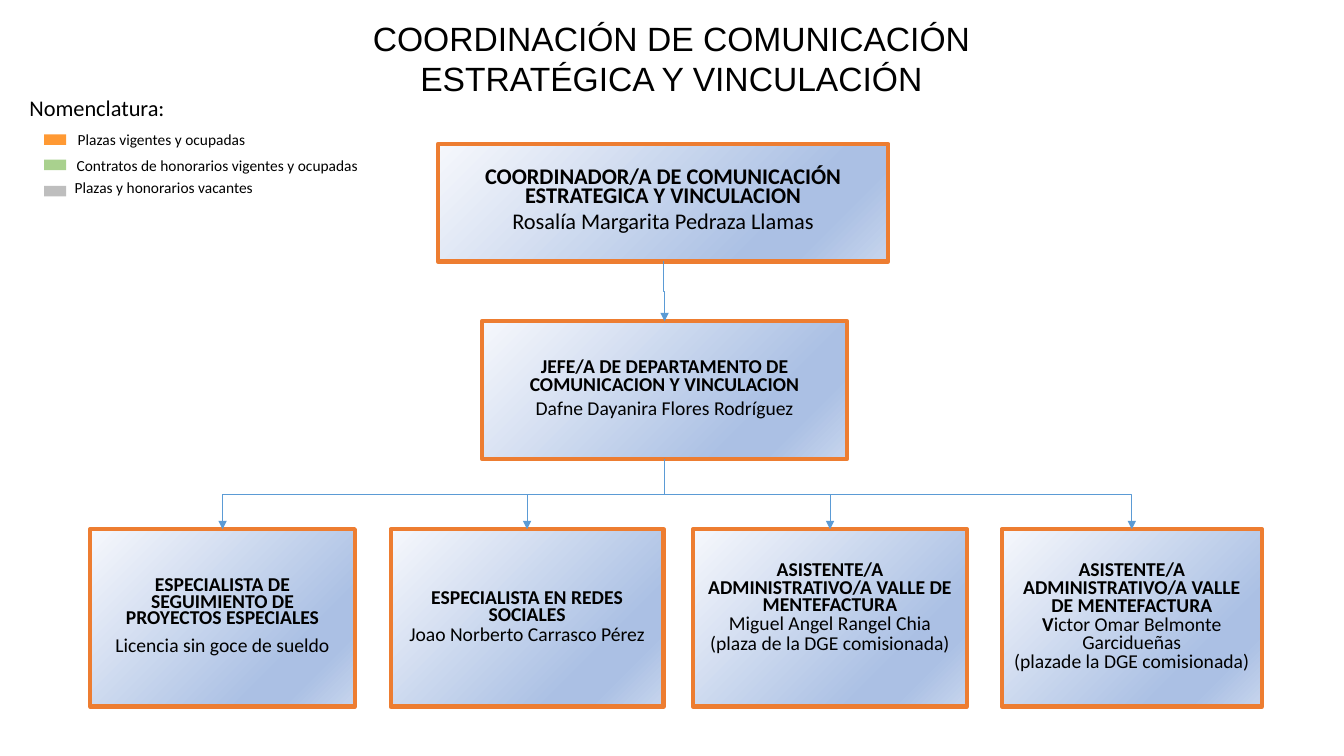
from lxml import etree
from pptx import Presentation
from pptx.dml.color import RGBColor
from pptx.enum.shapes import MSO_CONNECTOR, MSO_SHAPE
from pptx.enum.text import MSO_ANCHOR, MSO_AUTO_SIZE, PP_ALIGN
from pptx.oxml.ns import qn
from pptx.util import Pt

RECT = MSO_SHAPE.RECTANGLE
ELBOW = MSO_CONNECTOR.ELBOW
MIDDLE = MSO_ANCHOR.MIDDLE
CENTER, LEFT = PP_ALIGN.CENTER, PP_ALIGN.LEFT
NO_FIT = MSO_AUTO_SIZE.NONE
TITLE_ONLY = 5
SCALE = 9525  # EMU in one px

BLACK, ORANGE, BLUE = "000000", "ED7D31", "5B9BD5"
STOPS = [(0, "F6F8FC"), (74, "ABC0E4"), (83, "ABC0E4"), (100, "C7D5ED")]


def px(*sizes):
    return [round(size * SCALE) for size in sizes]


def color(code):
    return RGBColor.from_string(code)


class Chart:
    """Style and current slide of the organization chart."""

    def __init__(self, slide):
        self.slide = slide
        self.shapes = slide.shapes

    def style(self, para, size, font="Calibri", align=CENTER):
        para.alignment = align
        para.font.size = Pt(size)
        para.font.name = font
        para.font.color.rgb = color(BLACK)

    def title(self, text, left, top, width, height):
        head = self.shapes.title
        head.left, head.top, head.width, head.height = px(left, top, width, height)
        frame = head.text_frame
        frame.text = text
        frame.word_wrap = True
        frame.auto_size = NO_FIT
        frame.vertical_anchor = MIDDLE
        self.style(frame.paragraphs[0], 24, "Arial")

    def rect(self, left, top, width, height):
        shape = self.shapes.add_shape(RECT, *px(left, top, width, height))
        shape.shadow.inherit = False
        return shape

    def blend(self, fill):
        fill.gradient()
        fill.gradient_angle = 315
        stops = fill._xPr.find(qn("a:gradFill")).find(qn("a:gsLst"))
        for stop in list(stops):
            stops.remove(stop)
        for place, code in STOPS:
            stop = etree.SubElement(stops, qn("a:gs"), pos=str(place * 1000))
            etree.SubElement(stop, qn("a:srgbClr"), val=code)

    def box(self, left, top, width, height, paras, size=14, side=10, foot=5):
        """Each paragraph: bold text, plain text, line spacing, space before."""
        shape = self.rect(left, top, width, height)
        self.blend(shape.fill)
        shape.line.color.rgb = color(ORANGE)
        shape.line.width = Pt(3)
        frame = shape.text_frame
        frame.word_wrap = True
        frame.vertical_anchor = MIDDLE
        frame.margin_left, frame.margin_right, frame.margin_bottom = px(side, side, foot)
        for i, (bold, plain, line, before) in enumerate(paras):
            para = frame.add_paragraph() if i else frame.paragraphs[0]
            self.style(para, size)
            para.space_before = Pt(before)
            if line:
                para.line_spacing = Pt(line)
            for text, heavy in ((bold, True), (plain, False)):
                if text:
                    run = para.add_run()
                    run.text = text
                    run.font.bold = heavy

    def label(self, text, left, top, width, height, size):
        frame = self.shapes.add_textbox(*px(left, top, width, height)).text_frame
        frame.margin_left = frame.margin_right = frame.margin_bottom = 0
        frame.margin_top = px(1)[0]
        frame.word_wrap = True
        para = frame.paragraphs[0]
        para.text = text
        para.space_before = Pt(1.1)
        self.style(para, size, align=LEFT)

    def swatch(self, left, top, width, height, code):
        shape = self.rect(left, top, width, height)
        shape.fill.solid()
        shape.fill.fore_color.rgb = color(code)
        shape.line.fill.background()

    def arrow(self, x1, y1, x2, y2):
        """Elbow that leaves downwards: a level elbow turned about its centre."""
        mid_x, mid_y = (x1 + x2) / 2, (y1 + y2) / 2
        half_w, half_h = (y2 - y1) / 2, abs(x2 - x1) / 2
        right = x2 > x1
        if right:
            half_w = -half_w
        link = self.shapes.add_connector(ELBOW, *px(
            mid_x - half_w, mid_y - half_h, mid_x + half_w, mid_y + half_h))
        link.line.color.rgb = color(BLUE)
        link.line.width = Pt(0.5)
        props = link._element.spPr
        props.find(qn("a:xfrm")).set("rot", str((270 if right else 90) * 60000))
        etree.SubElement(props.find(qn("a:ln")), qn("a:tailEnd"), type="triangle")
        etree.SubElement(props, qn("a:effectLst"))


def main():
    deck = Presentation()
    deck.slide_width, deck.slide_height = px(1280, 720)
    chart = Chart(deck.slides.add_slide(deck.slide_layouts[TITLE_ONLY]))

    chart.title("COORDINACIÓN DE COMUNICACIÓN ESTRATÉGICA Y VINCULACIÓN",
                235, 12, 809, 87)

    # Legend
    chart.label("Nomenclatura:", 28, 89, 167, 27, 16)
    legend = [
        ("Plazas vigentes y ocupadas", "FF9933", 128, 74, 123),
        ("Contratos de honorarios vigentes y ocupadas", "A9D18E", 152, 73, 148),
        ("Plazas y honorarios vacantes", "BEBEBE", 177, 71, 169),
    ]
    for text, code, mark, left, top in legend:
        chart.swatch(42, mark, 21, 10, code)
        chart.label(text, left, top, 276, 19, 11)

    # Heads
    chart.box(417, 137, 429, 112, [
        ("COORDINADOR/A DE COMUNICACIÓN ESTRATEGICA Y VINCULACION", "", 13, 2.6),
        ("", "Rosalía Margarita Pedraza Llamas", 18, 0.8)], size=16)
    chart.box(459, 306, 348, 131, [
        ("JEFE/A DE DEPARTAMENTO DE", "", 12.6, 1.1),
        ("COMUNICACION Y VINCULACION", "", 12.6, 0),
        ("", "Dafne Dayanira Flores Rodríguez", 16.6, 0.8)])
    chart.arrow(632, 249, 633, 306)

    # Staff: left, width, side and foot margins, paragraphs
    post = "ASISTENTE/A ADMINISTRATIVO/A VALLE DE MENTEFACTURA"
    tight = (12.6, 1.1)
    staff = [
        (86, 252, 16, 5, [
            ("ESPECIALISTA DE SEGUIMIENTO DE PROYECTOS ESPECIALES", "", 11.9, 2.5),
            ("", "Licencia sin goce de sueldo", None, 3)]),
        (372, 260, 10, 5, [
            ("ESPECIALISTA EN REDES SOCIALES", "", *tight),
            ("", "Joao Norberto Carrasco Pérez", *tight)]),
        (660, 261, 10, 23, [
            (post, "", *tight),
            ("", "Miguel Angel Rangel Chia", *tight),
            ("", "(plaza de la DGE comisionada)", *tight)]),
        (954, 248, 10, 5, [
            (post, "", *tight),
            ("V", "ictor Omar Belmonte Garcidueñas", *tight),
            ("", "(plazade la DGE comisionada)", *tight)]),
    ]
    for left, width, side, foot, paras in staff:
        chart.box(left, 504, width, 169, paras, side=side, foot=foot)
        chart.arrow(633, 437, left + width / 2, 504)

    deck.save("out.pptx")


if __name__ == "__main__":
    main()
